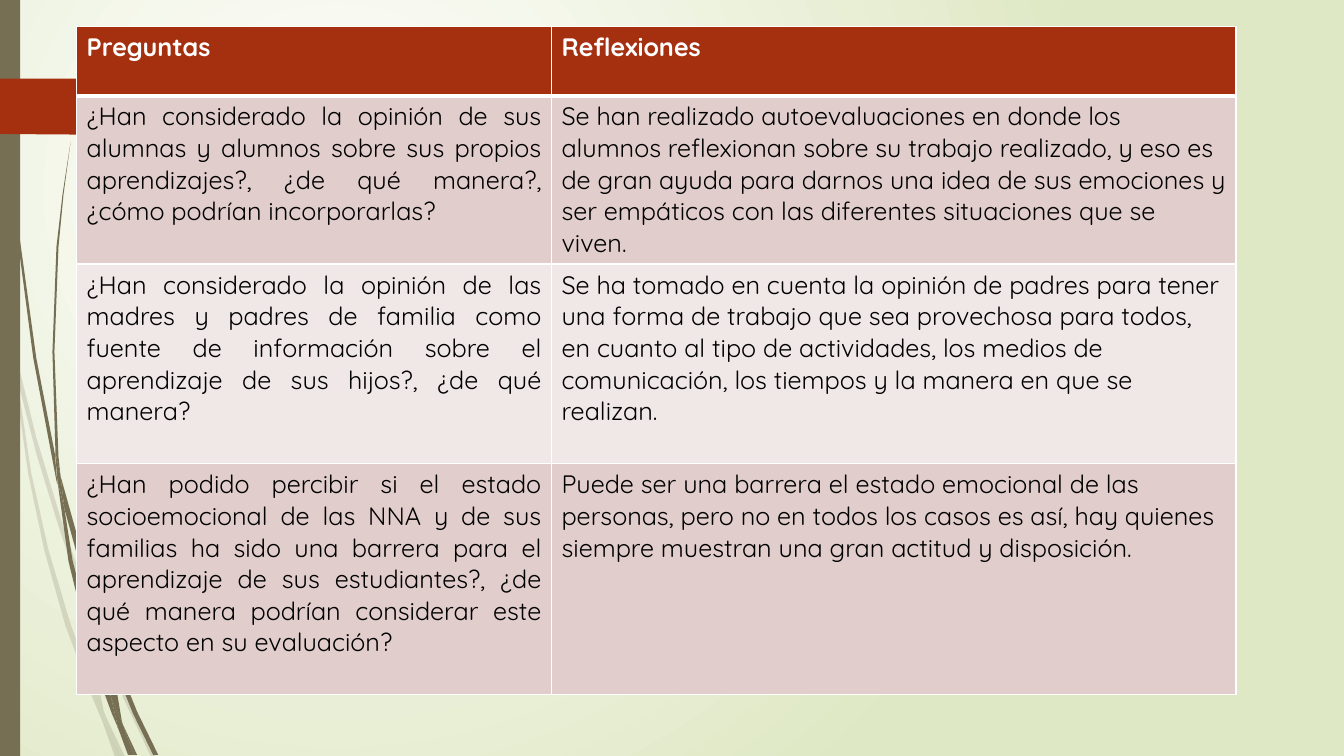
from dataclasses import dataclass

from lxml.etree import SubElement
from pptx import Presentation
from pptx.dml.color import RGBColor
from pptx.enum.shapes import MSO_SHAPE
from pptx.enum.text import PP_ALIGN
from pptx.oxml.ns import qn
from pptx.shapes.autoshape import Shape
from pptx.slide import Slide
from pptx.table import _Cell
from pptx.util import Inches, Pt

WHITE = RGBColor(0xFF, 0xFF, 0xFF)
BLACK = RGBColor(0x00, 0x00, 0x00)
LIME = RGBColor(0xDF, 0xE8, 0xC4)
OLIVE = RGBColor(0x76, 0x6F, 0x54)
RUST = RGBColor(0xA5, 0x30, 0x10)
ROSE = RGBColor(0xE1, 0xCD, 0xCC)
PALE = RGBColor(0xF0, 0xE8, 0xE7)

FONT = "Quicksand"
SIZE = Pt(18)
WIDTHS = (4.71, 6.79)
GRAIN = 100  # outline units to the inch

Outline = list[tuple[float, float]]


@dataclass
class Bunch:
    """Blades of grass that share one opacity, in percent."""
    alpha: int
    blades: list[Outline]


@dataclass
class Row:
    height: float
    fill: RGBColor
    ask: str
    reply: str
    head: bool = False


BACK = Bunch(20, [
    [(0.58, 5.22), (0.84, 5.99), (0.85, 5.86), (0.62, 5.2), (0.36, 4.34), (0.14, 3.45),
     (0.17, 3.76), (0.36, 4.5)],
    [(0.92, 6.07), (0.88, 5.96), (0.88, 6.1), (1.23, 6.94), (1.5, 7.51), (1.55, 7.51),
     (1.27, 6.92)],
    [(1.19, 7.51), (1.24, 7.51), (1.05, 7.11)],
    [(0.93, 6.83), (0.7, 6.19), (0.48, 5.45), (0.31, 4.69), (0.17, 3.76), (0.11, 3.5),
     (0.28, 4.7), (0.44, 5.46), (0.65, 6.21), (0.92, 6.93), (1.01, 7.14), (0.99, 7.07)],
    [(0.84, 5.99), (0.87, 6.46), (0.93, 6.83), (0.96, 6.92), (1.05, 7.11), (1.03, 7.06),
     (0.91, 6.46), (0.88, 6.1), (0.88, 6.08)],
    [(1.01, 7.14), (1.14, 7.51), (1.19, 7.51)],
    [(0.96, 6.92), (0.93, 6.83), (0.99, 7.07), (1.01, 7.14), (1.19, 7.51), (1.05, 7.11)],
])

FRONT = Bunch(100, [
    [(0.07, 1.1), (0.17, 2.33), (0.33, 3.55), (0.56, 4.77), (0.57, 4.81), (0.55, 4.57),
     (0.55, 4.53), (0.36, 3.55), (0.19, 2.32), (0.08, 1.09), (0.05, 0.48), (0.04, 0),
     (0.03, 0), (0.04, 0.48)],
    [(0.88, 5.92), (1.06, 6.45), (1.06, 6.33), (1.06, 6.31), (0.93, 5.9), (0.6, 4.72),
     (0.64, 5.05)],
    [(1.13, 6.49), (1.1, 6.41), (1.11, 6.56), (1.32, 7.08), (1.52, 7.49), (1.57, 7.49),
     (1.36, 7.06)],
    [(1.1, 6.91), (0.98, 6.57), (0.72, 5.56), (0.64, 5.05), (0.57, 4.77), (0.68, 5.57),
     (0.93, 6.59), (1.11, 7.08), (1.17, 7.22), (1.16, 7.17)],
    [(0.6, 4.72), (0.58, 4.53), (0.54, 3.49), (0.58, 2.45), (0.63, 1.93), (0.7, 1.41),
     (0.62, 1.93), (0.56, 2.45), (0.52, 3.49), (0.55, 4.49)],
    [(1.33, 7.49), (1.36, 7.49), (1.22, 7.19)],
    [(0.57, 4.77), (0.64, 5.05), (0.6, 4.72), (0.55, 4.49), (0.55, 4.53)],
    [(1.17, 7.22), (1.27, 7.49), (1.31, 7.49)],
    [(1.06, 6.45), (1.1, 6.91), (1.16, 7.06), (1.22, 7.19), (1.21, 7.16), (1.11, 6.56),
     (1.09, 6.51)],
    [(1.16, 7.06), (1.1, 6.91), (1.16, 7.17), (1.17, 7.22), (1.3, 7.49), (1.33, 7.49),
     (1.22, 7.19)],
])

TAB = [(0, 0.78), (1.46, 0.78), (1.48, 0.79), (1.73, 1.04), (1.74, 1.06), (1.73, 1.08),
       (1.48, 1.33), (1.46, 1.34), (1.36, 1.34), (0, 1.33)]

ROWS = [
    Row(0.69, RUST, "Preguntas", "Reflexiones", head=True),
    Row(1.67, ROSE,
        "¿Han considerado la opinión de sus alumnas y alumnos sobre sus propios "
        "aprendizajes?, ¿de qué manera?, ¿cómo podrían incorporarlas?",
        "Se han realizado autoevaluaciones en donde los alumnos reflexionan sobre su "
        "trabajo realizado, y eso es de gran ayuda para darnos una idea de sus emociones "
        "y ser empáticos con las diferentes situaciones que se viven."),
    Row(1.98, PALE,
        "¿Han considerado la opinión de las madres y padres de familia como fuente de "
        "información sobre el aprendizaje de sus hijos?, ¿de qué manera?",
        "Se ha tomado en cuenta la opinión de padres para tener una forma de trabajo que "
        "sea provechosa para todos, en cuanto al tipo de actividades, los medios de "
        "comunicación, los tiempos y la manera en que se realizan."),
    Row(2.29, ROSE,
        "¿Han podido percibir si el estado socioemocional de las NNA y de sus familias ha "
        "sido una barrera para el aprendizaje de sus estudiantes?, ¿de qué manera podrían "
        "considerar este aspecto en su evaluación?",
        "Puede ser una barrera el estado emocional de las personas, pero no en todos los "
        "casos es así, hay quienes siempre muestran una gran actitud y disposición."),
]


def paint(shape: Shape, color: RGBColor, alpha: int = 100) -> None:
    shape.shadow.inherit = False
    shape.line.fill.background()
    shape.fill.solid()
    shape.fill.fore_color.rgb = color
    if alpha < 100:
        tint = shape.element.spPr.find(".//" + qn("a:srgbClr"))
        SubElement(tint, qn("a:alpha"), val=str(alpha * 1000))


def trace(shapes, points: Outline) -> Shape:
    dots = [(round(x * GRAIN), round(y * GRAIN)) for x, y in points]
    pen = shapes.build_freeform(*dots[0], scale=Inches(1) / GRAIN)
    pen.add_line_segments(dots[1:], close=True)
    return pen.convert_to_shape()


def draw_bunch(slide: Slide, bunch: Bunch) -> None:
    group = slide.shapes.add_group_shape()
    for blade in bunch.blades:
        paint(trace(group.shapes, blade), OLIVE, bunch.alpha)


def glow(slide: Slide) -> None:
    fill = slide.background.fill
    fill.gradient()
    for stop, color, place in zip(fill.gradient_stops, (WHITE, LIME), (0, 1)):
        stop.color.rgb = color
        stop.position = place
    grad = slide.element.find(".//" + qn("a:gradFill"))
    grad.remove(grad.find(qn("a:lin")))
    ring = SubElement(grad, qn("a:path"), path="circle")
    SubElement(ring, qn("a:fillToRect"), l="50000", t="50000", r="100000", b="100000")


def edge(cell: _Cell, side: str, width: float) -> None:
    props = cell._tc.get_or_add_tcPr()
    line = SubElement(props, qn("a:ln" + side), w=str(Pt(width)))
    SubElement(SubElement(line, qn("a:solidFill")), qn("a:srgbClr"), val=str(WHITE))


def fill_cell(cell: _Cell, text: str, row: Row, align: PP_ALIGN, top: float) -> None:
    for side, width in (("L", 1), ("R", 1), ("T", top), ("B", 3 if row.head else 1)):
        edge(cell, side, width)
    cell.fill.solid()
    cell.fill.fore_color.rgb = row.fill
    cell.text_frame.text = text
    para = cell.text_frame.paragraphs[0]
    para.alignment = align
    font = para.runs[0].font
    font.name, font.size, font.bold = FONT, SIZE, row.head
    font.color.rgb = WHITE if row.head else BLACK


def draw_table(slide: Slide) -> None:
    high = sum(row.height for row in ROWS)
    table = slide.shapes.add_table(len(ROWS), len(WIDTHS), Inches(0.76), Inches(0.26),
                                   Inches(sum(WIDTHS)), Inches(high)).table
    for col, width in zip(table.columns, WIDTHS):
        col.width = Inches(width)
    for num, row in enumerate(ROWS):
        table.rows[num].height = Inches(row.height)
        top = 3 if num == 1 else 1
        left = PP_ALIGN.LEFT if row.head else PP_ALIGN.JUSTIFY
        fill_cell(table.cell(num, 0), row.ask, row, left, top)
        fill_cell(table.cell(num, 1), row.reply, row, PP_ALIGN.LEFT, top)


def main() -> None:
    deck = Presentation()
    deck.slide_width, deck.slide_height = Inches(13.33), Inches(7.5)
    slide = deck.slides.add_slide(deck.slide_layouts[6])

    # Backdrop: glow, grass, side bar and tab
    glow(slide)
    for bunch in (BACK, FRONT):
        draw_bunch(slide, bunch)
    bar = slide.shapes.add_shape(MSO_SHAPE.RECTANGLE, 0, 0, Inches(0.2), Inches(7.5))
    paint(bar, OLIVE)
    paint(trace(slide.shapes, TAB), RUST)

    # Questions and answers
    draw_table(slide)
    deck.save("out.pptx")


if __name__ == "__main__":
    main()
